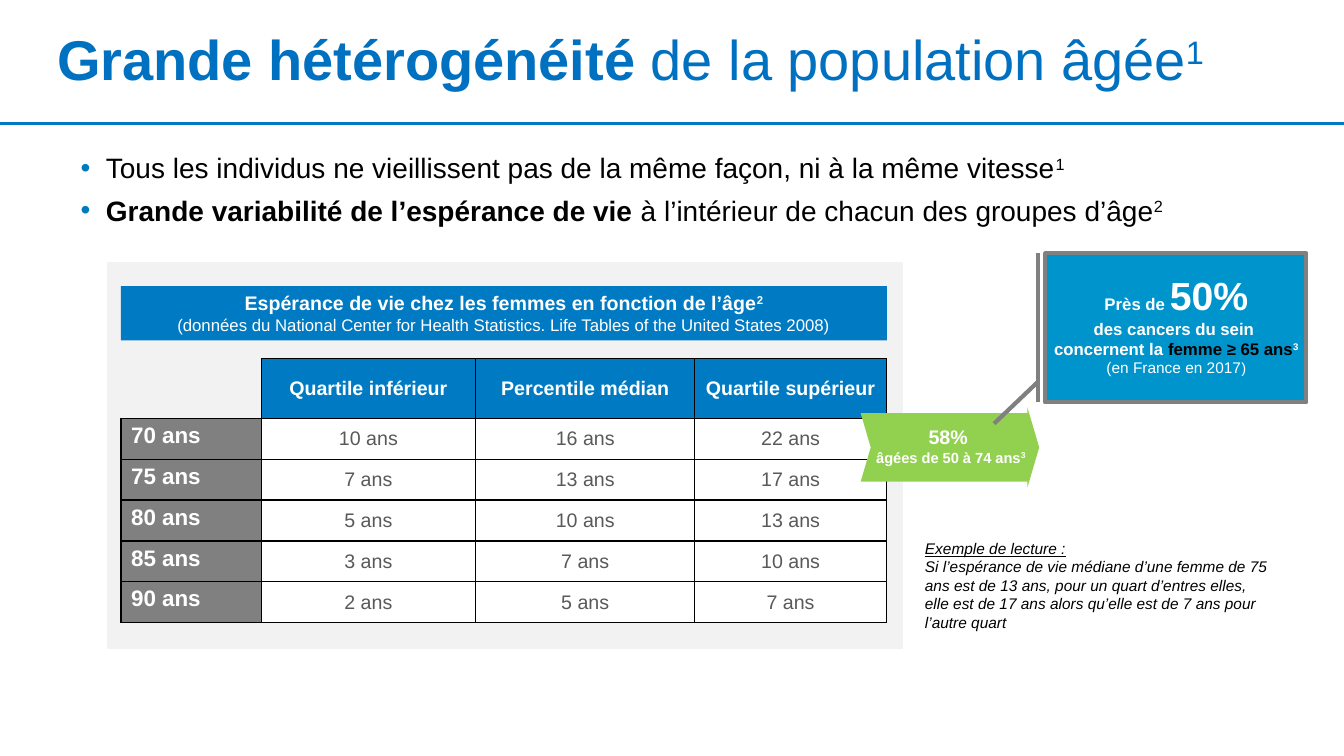
from lxml.etree import SubElement
from pptx import Presentation
from pptx.dml.color import RGBColor
from pptx.enum.shapes import MSO_CONNECTOR as Connector, MSO_SHAPE as Preset
from pptx.enum.text import MSO_ANCHOR as Anchor, PP_ALIGN as Align
from pptx.oxml.ns import qn
from pptx.util import Cm, Pt

COLORS = {
    "title": "0070C0", "blue": "007BC3", "callout": "0094CC", "green": "92D050",
    "panel": "F2F2F2", "grey": "808080", "value": "595959",
    "black": "000000", "white": "FFFFFF",
}
SUP = {"sup": True}
BOLD = {"bold": True}

LIFE_EXPECTANCY = [
    ["", "Quartile inférieur", "Percentile médian", "Quartile supérieur"],
    ["70 ans", "10 ans", "16 ans", "22 ans"],
    ["75 ans", "7 ans", "13 ans", "17 ans"],
    ["80 ans", "5 ans", "10 ans", "13 ans"],
    ["85 ans", "3 ans", "7 ans", "10 ans"],
    ["90 ans", "2 ans", "5 ans", "7 ans"],
]


def rgb(name):
    return RGBColor.from_string(COLORS[name])


class SlideBuilder:
    """Holds the font and the slide; boxes are (left, top, width, height) in cm."""

    def __init__(self, slide, font="Arial"):
        self.slide = slide
        self.font = font

    def run(self, paragraph, text, size, color="black", bold=False,
            italic=False, underline=False, sup=False):
        run = paragraph.add_run()
        run.text = text
        font = run.font
        font.name, font.size = self.font, Pt(size)
        font.bold, font.italic, font.underline = bold, italic, underline
        font.color.rgb = rgb(color)
        if sup:
            run._r.get_or_add_rPr().set("baseline", "30000")

    def fill_text(self, frame, paragraphs, align=Align.LEFT, **base):
        """Each paragraph is a list of (text, style changes) runs."""
        for i, runs in enumerate(paragraphs):
            paragraph = frame.add_paragraph() if i else frame.paragraphs[0]
            paragraph.alignment = align
            for text, changes in runs:
                self.run(paragraph, text, **{**base, **changes})

    def text(self, box, paragraphs, anchor=Anchor.TOP, **style):
        frame = self.slide.shapes.add_textbox(*map(Cm, box)).text_frame
        frame.word_wrap = True
        frame.vertical_anchor = anchor
        self.fill_text(frame, paragraphs, **style)
        return frame

    def bullets(self, box, paragraphs, **style):
        frame = self.text(box, paragraphs, **style)
        for paragraph in frame.paragraphs:
            paragraph.space_after = Pt(6)
            props = paragraph._p.get_or_add_pPr()
            props.set("marL", str(Cm(0.64)))
            props.set("indent", str(-Cm(0.64)))
            color = SubElement(props, qn("a:buClr"))
            SubElement(color, qn("a:srgbClr"), val=COLORS["blue"])
            SubElement(props, qn("a:buFont"), typeface=self.font)
            SubElement(props, qn("a:buChar"), char="•")

    def shape(self, preset, box, fill, line=None, width=1, adjust=()):
        shape = self.slide.shapes.add_shape(preset, *map(Cm, box))
        shape.shadow.inherit = False
        shape.fill.solid()
        shape.fill.fore_color.rgb = rgb(fill)
        if line:
            shape.line.color.rgb = rgb(line)
            shape.line.width = Pt(width)
        else:
            shape.line.fill.background()
        for i, value in enumerate(adjust):
            shape.adjustments[i] = value
        return shape

    def rule(self, y, length, color, width):
        line = self.slide.shapes.add_connector(
            Connector.STRAIGHT, 0, Cm(y), Cm(length), Cm(y))
        line.line.color.rgb = rgb(color)
        line.line.width = Pt(width)
        SubElement(line._element.spPr, qn("a:effectLst"))

    def border(self, cell, sides, hidden=""):
        props = cell._tc.get_or_add_tcPr()
        for side in sides:
            line = SubElement(props, qn(f"a:ln{side}"), w=str(Pt(1)))
            if side in hidden:
                SubElement(line, qn("a:noFill"))
            else:
                solid = SubElement(line, qn("a:solidFill"))
                SubElement(solid, qn("a:srgbClr"), val=COLORS["black"])

    def table(self, left, top, widths, heights, rows):
        table = self.slide.shapes.add_table(
            len(rows), len(widths), Cm(left), Cm(top),
            Cm(sum(widths)), Cm(sum(heights))).table
        table.first_row = table.horz_banding = False
        for column, width in zip(table.columns, widths):
            column.width = Cm(width)
        for row, height in zip(table.rows, heights):
            row.height = Cm(height)
        for r, row in enumerate(rows):
            for c, value in enumerate(row):
                self.cell(table.cell(r, c), value, header=r == 0, label=c == 0)

    def cell(self, cell, value, header, label):
        corner = header and label
        self.border(cell, "LRTB", hidden="LT" if corner else "")
        if corner:
            cell.fill.background()
            return
        if header:
            fill, style = "blue", {"size": 14, "color": "white", "bold": True}
        elif label:
            fill, style = "grey", {"size": 16, "color": "white", "bold": True}
        else:
            fill, style = "white", {"size": 14, "color": "value"}
        cell.fill.solid()
        cell.fill.fore_color.rgb = rgb(fill)
        cell.vertical_anchor = Anchor.TOP if label else Anchor.MIDDLE
        self.fill_text(cell.text_frame, [[(value, {})]],
                       align=Align.LEFT if label else Align.CENTER, **style)


def main():
    deck = Presentation()
    deck.slide_width, deck.slide_height = Cm(33.87), Cm(19.05)
    page = SlideBuilder(deck.slides.add_slide(deck.slide_layouts[6]))

    page.rule(3.12, 33.87, "blue", 2.25)
    page.shape(Preset.RECTANGLE, (2.72, 6.63, 20.02, 9.7), "panel", "panel")
    title = page.text(
        (1.19, 0.38, 31.72, 2.41),
        [[("Grande hétérogénéité ", BOLD), ("de la population âgée", {}), ("1", SUP)]],
        anchor=Anchor.MIDDLE, size=40, color="title")
    title.paragraphs[0].line_spacing = 0.9
    page.bullets((1.78, 3.68, 30.56, 2.6), [
        [("Tous les individus ne vieillissent pas de la même façon, ni à la même vitesse", {}),
         ("1", SUP)],
        [("Grande variabilité de l’espérance de vie ", BOLD),
         ("à l’intérieur de chacun des groupes d’âge", {}), ("2", SUP)],
    ], size=20)

    page.table(3.05, 9.04, [3.53, 5.41, 5.52, 4.83], [1.5] + [1.03] * 5, LIFE_EXPECTANCY)
    page.text((23.06, 13.46, 9.27, 2.62), [
        [("Exemple de lecture :", {"underline": True})],
        [("Si l’espérance de vie médiane d’une femme de 75 ans est de 13 ans, "
          "pour un quart d’entres elles, elle est de 17 ans alors qu’elle est "
          "de 7 ans pour l’autre quart", {})],
    ], size=11, italic=True)

    banner = page.shape(Preset.RECTANGLE, (3.05, 7.21, 19.3, 1.37), "blue").text_frame
    banner.word_wrap = True
    banner.vertical_anchor = Anchor.TOP
    page.fill_text(banner, [
        [("Espérance de vie chez les femmes en fonction de l’âge", BOLD),
         ("2", {**BOLD, **SUP})],
        [("(données du National Center for Health Statistics. "
          "Life Tables of the United States 2008)", {"size": 12})],
    ], align=Align.CENTER, size=14, color="white")

    page.shape(Preset.NOTCHED_RIGHT_ARROW, (21.69, 10.26, 4.5, 2.03), "green",
               adjust=(0.853, 0.147))
    page.text((21.59, 10.59, 4.75, 1.32), [
        [("58% ", {"size": 14})],
        [("âgées de 50 à 74 ans", {}), ("3", SUP)],
    ], align=Align.CENTER, size=10.5, color="white", bold=True)

    page.shape(Preset.LINE_CALLOUT_1_BORDER_AND_ACCENT_BAR, (26.34, 6.38, 6.58, 3.76),
               "callout", "grey", 3, adjust=(0.863, -0.028, 1.143, -0.196))
    page.text((26.29, 6.71, 6.71, 2.95), [
        [("Près de ", {}), ("50%", {"size": 28})],
        [("des cancers du sein ", {})],
        [("concernent la ", {}), ("femme ≥ 65 ans", {"color": "black"}), ("3", SUP)],
        [("(en France en 2017", {"size": 11, "bold": False}),
         (")", {"size": 10.5, "bold": False})],
    ], align=Align.CENTER, size=12, color="white", bold=True)

    deck.save("out.pptx")


if __name__ == "__main__":
    main()
